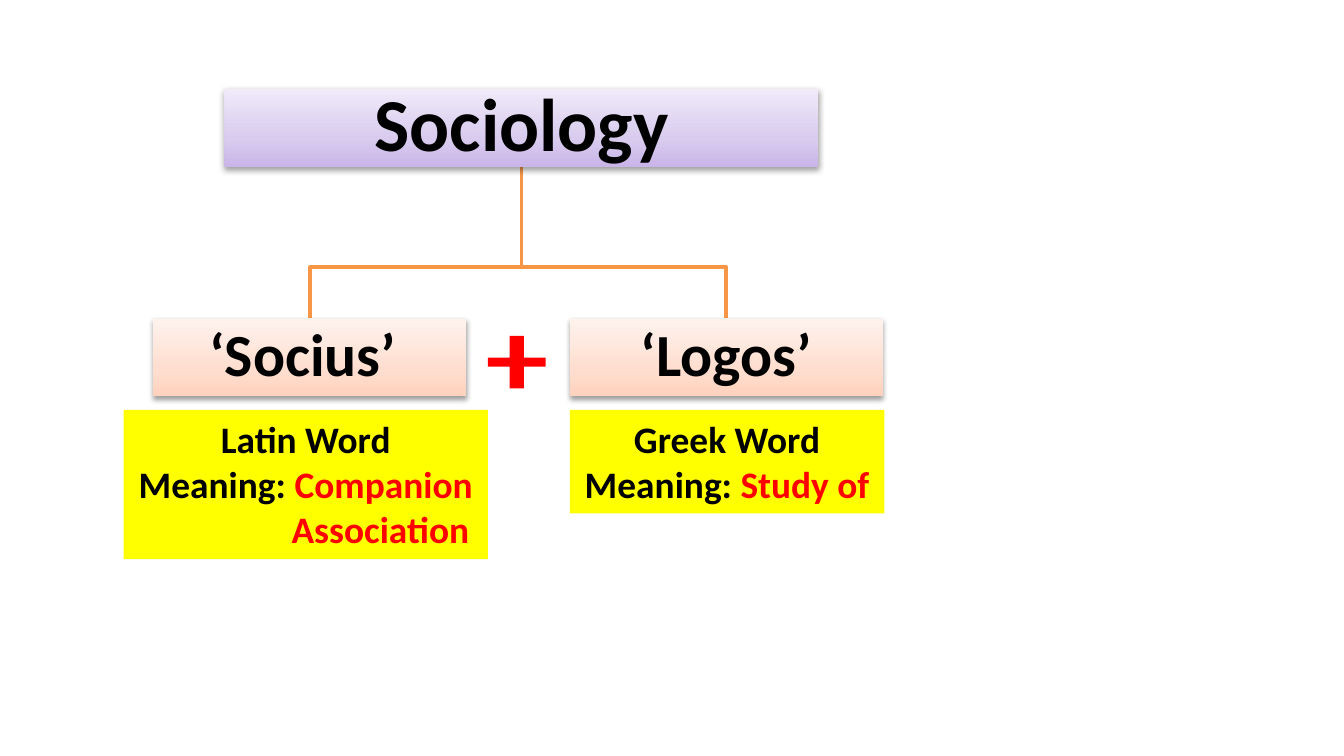
from lxml.etree import SubElement
from pptx import Presentation
from pptx.dml.color import RGBColor
from pptx.enum.shapes import MSO_SHAPE as SHAPE
from pptx.enum.text import MSO_ANCHOR as ANCHOR, PP_ALIGN as ALIGN
from pptx.oxml.ns import qn
from pptx.util import Inches, Pt

COLORS = {"black": "000000", "red": "FF0000", "yellow": "FFFF00", "orange": "F79646"}
# Gradient stops from bottom to top: percent and colour
PURPLE = [(0, "C9B5E8"), (35, "D8CBEE"), (100, "F0EAF9")]
PEACH = [(0, "FFD2BD"), (35, "FFDED0"), (100, "FFF2ED")]
BOX_H = 0.58


def rgb(name):
    return RGBColor.from_string(COLORS[name])


def add_shape(s, kind, x, y, w, h, color=None):
    sp = s.shapes.add_shape(kind, Inches(x), Inches(y), Inches(w), Inches(h))
    sp.shadow.inherit = False
    sp.line.fill.background()
    if color:
        sp.fill.solid()
        sp.fill.fore_color.rgb = rgb(color)
    return sp


def add_run(p, text, size, color="black"):
    r = p.add_run()
    r.text = text
    r.font.name = "Calibri"
    r.font.size = Pt(size)
    r.font.bold = True
    r.font.color.rgb = rgb(color)


def add_color(parent, value):
    return SubElement(parent, qn("a:srgbClr"), val=value)


def add_term_box(s, x, y, w, text, size, stops):
    """Shadowed gradient box with one centred term."""
    sp = add_shape(s, SHAPE.RECTANGLE, x, y, w, BOX_H)
    sp.fill.gradient()
    sp.fill.gradient_angle = 90
    spPr = sp._element.spPr
    stop_list = spPr.find(qn("a:gradFill")).find(qn("a:gsLst"))
    for old in list(stop_list):
        stop_list.remove(old)
    for percent, value in stops:
        add_color(SubElement(stop_list, qn("a:gs"), pos=str(percent * 1000)), value)

    shadow = SubElement(spPr.find(qn("a:effectLst")), qn("a:outerShdw"),
                        blurRad=str(Pt(3.1)), dist=str(Pt(1.6)),
                        dir="5400000", rotWithShape="0")
    SubElement(add_color(shadow, COLORS["black"]), qn("a:alpha"), val="38000")

    tf = sp.text_frame
    tf.word_wrap = True
    tf.vertical_anchor = ANCHOR.MIDDLE
    tf.margin_left = tf.margin_right = tf.margin_top = tf.margin_bottom = Inches(0.02)
    p = tf.paragraphs[0]
    p.alignment = ALIGN.CENTER
    p.line_spacing = 0.9
    add_run(p, text, size)


def add_branch(s, x1, y1, x2, y2, bend_y):
    """Stepped line from the root box down to a child box."""
    fb = s.shapes.build_freeform(Inches(x1), Inches(y1))
    fb.add_line_segments([(Inches(x), Inches(y)) for x, y in
                          [(x1, bend_y), (x2, bend_y), (x2, y2)]], close=False)
    sp = fb.convert_to_shape()
    sp.shadow.inherit = False
    sp.fill.background()
    sp.line.color.rgb = rgb("orange")
    sp.line.width = Pt(2)


def add_note(s, x, y, w, h, lines):
    """Yellow note; each line is an alignment and its coloured runs."""
    tf = add_shape(s, SHAPE.RECTANGLE, x, y, w, h, "yellow").text_frame
    tf.word_wrap = False
    tf.vertical_anchor = ANCHOR.TOP
    for i, (align, runs) in enumerate(lines):
        p = tf.add_paragraph() if i else tf.paragraphs[0]
        p.alignment = align
        if align == ALIGN.RIGHT:
            p._p.get_or_add_pPr().set("marR", str(Inches(0.04)))
        for text, color in runs:
            add_run(p, text, 20, color)


def main():
    prs = Presentation()
    prs.slide_width = Inches(10)
    prs.slide_height = prs.slide_width * 9 // 16
    s = prs.slides.add_slide(prs.slide_layouts[6])

    root_x, root_y, root_w = 1.67, 0.66, 4.42
    child_y, child_w = 2.37, 2.33
    terms = [(4.24, "‘Logos’"), (1.14, "‘Socius’ ")]

    # Branches behind the boxes
    for x, _ in terms:
        add_branch(s, root_x + root_w / 2, root_y + BOX_H,
                   x + child_w / 2, child_y, 1.99)

    # Word and its two roots
    add_term_box(s, root_x, root_y, root_w, "Sociology", 40, PURPLE)
    for x, text in reversed(terms):
        add_term_box(s, x, child_y, child_w, text, 32, PEACH)

    # Origin and meaning of each root
    add_note(s, 0.92, 3.05, 2.71, 1.11, [
        (ALIGN.CENTER, [("Latin Word", "black")]),
        (ALIGN.CENTER, [("Meaning: ", "black"), ("Companion", "red")]),
        (ALIGN.RIGHT, [("Association", "red")]),
    ])
    add_note(s, 4.24, 3.05, 2.34, 0.77, [
        (ALIGN.CENTER, [("Greek Word", "black")]),
        (ALIGN.CENTER, [("Meaning: ", "black"), ("Study of", "red")]),
    ])

    # Plus sign between the roots
    plus = add_shape(s, SHAPE.CROSS, 3.63, 2.5, 0.43, 0.39, "red")
    plus.adjustments[0] = 0.415

    prs.save("out.pptx")


if __name__ == "__main__":
    main()
